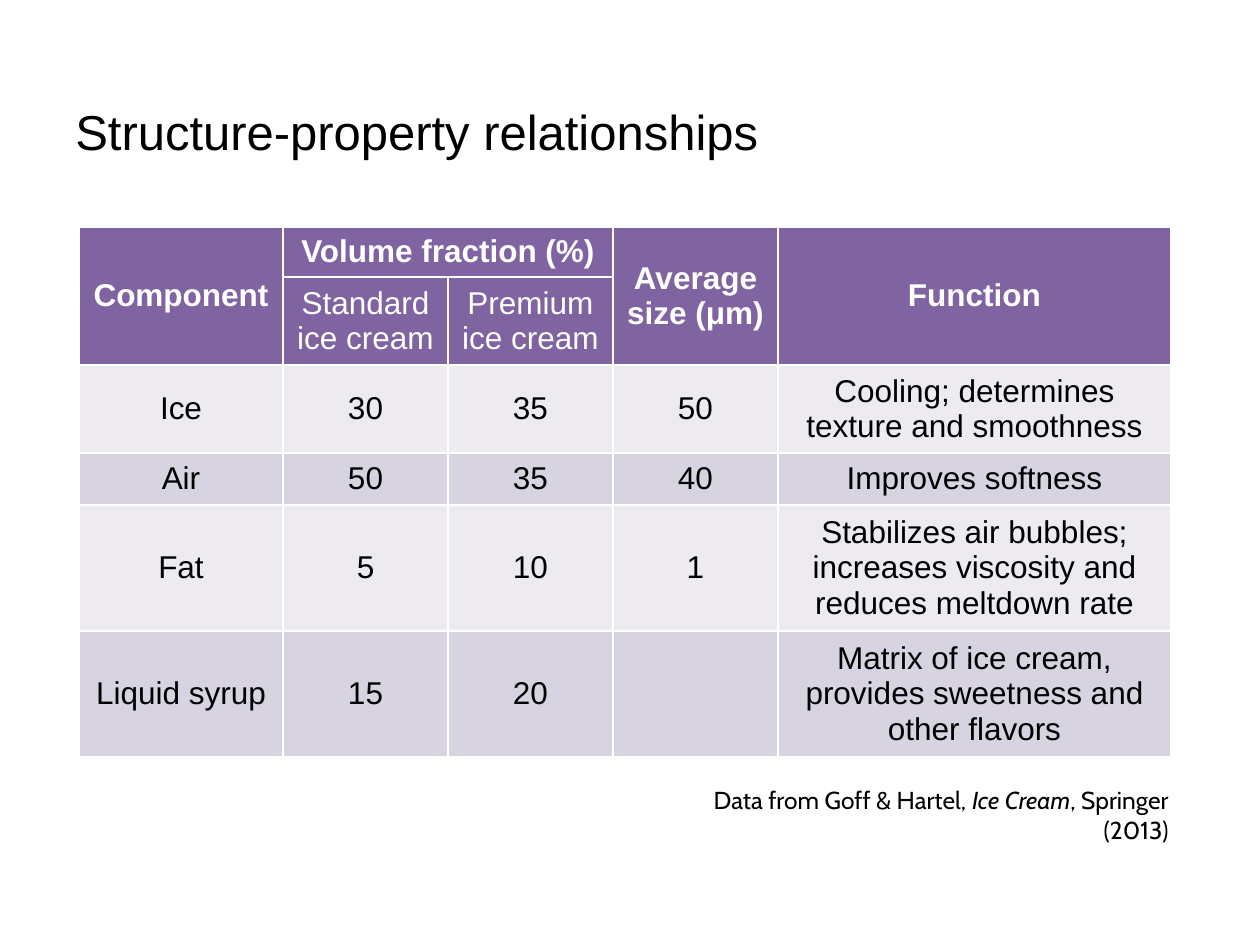
import dataclasses
import typing

import pptx
import pptx.dml.color
import pptx.enum.text
import pptx.oxml
import pptx.oxml.ns
import pptx.util

PIXELS_PER_INCH = 126
PURPLE, PALE, LILAC = "8064A2", "EDEAF0", "D8D3E0"
WHITE, BLACK = "FFFFFF", "000000"
ALIGN = pptx.enum.text.PP_ALIGN
ANCHOR = pptx.enum.text.MSO_ANCHOR


@dataclasses.dataclass
class Run:
    """A stretch of text with its font settings."""
    text: str
    size: int = 18
    name: str = "Arial"
    color: str = BLACK
    bold: bool = False
    italic: bool = False


@dataclasses.dataclass
class TextBox:
    """A text box placed in pixels."""
    left: int
    top: int
    width: int
    height: int
    runs: list[Run]
    anchor: typing.Any = ANCHOR.TOP
    alignment: typing.Any = ALIGN.LEFT


@dataclasses.dataclass
class TableRow:
    """A table row with its height in pixels and its look."""
    height: int
    texts: list[str]
    fill: str
    color: str = BLACK
    bold: bool = False


TEXT_BOXES = [
    TextBox(63, 63, 1124, 136, [Run("Structure-property relationships", 28)], ANCHOR.MIDDLE),
    TextBox(638, 779, 543, 43, [
        Run("Data from Goff & Hartel, ", 14, "Cabin"),
        Run("Ice Cream", 14, "Cabin", italic=True),
        Run(", Springer (2013)", 14, "Cabin"),
    ], alignment=ALIGN.RIGHT),
]
TABLE_LEFT, TABLE_TOP = 79, 227
COLUMN_WIDTHS = [204, 165, 165, 165, 393]
MERGES = [((0, 0), (1, 0)), ((0, 1), (0, 2)), ((0, 3), (1, 3)), ((0, 4), (1, 4))]
ROWS = [
    TableRow(50, ["Component", "Volume fraction (%)", "", "Average size (μm)", "Function"],
             PURPLE, WHITE, True),
    TableRow(88, ["", "Standard ice cream", "Premium ice cream", "", ""], PURPLE, WHITE),
    TableRow(88, ["Ice", "30", "35", "50", "Cooling; determines texture and smoothness"], PALE),
    TableRow(52, ["Air", "50", "35", "40", "Improves softness"], LILAC),
    TableRow(126, ["Fat", "5", "10", "1",
                   "Stabilizes air bubbles; increases viscosity and reduces meltdown rate"], PALE),
    TableRow(126, ["Liquid syrup", "15", "20", "",
                   "Matrix of ice cream, provides sweetness and other flavors"], LILAC),
]


def px(length: int) -> pptx.util.Emu:
    """Turn pixels into EMU."""
    return pptx.util.Emu(round(length * 914400 / PIXELS_PER_INCH))


def rgb(color: str) -> pptx.dml.color.RGBColor:
    """Turn a hex string into a colour."""
    return pptx.dml.color.RGBColor.from_string(color)


def set_font(font: typing.Any, run: Run) -> None:
    """Give a font the settings of a run."""
    values = {"size": pptx.util.Pt(run.size), "name": run.name,
              "bold": run.bold, "italic": run.italic}
    for attribute, value in values.items():
        setattr(font, attribute, value)
    font.color.rgb = rgb(run.color)


def write(paragraph: typing.Any, runs: list[Run], alignment: typing.Any) -> None:
    """Write runs into a paragraph."""
    paragraph.alignment = alignment
    for run in runs:
        text_run = paragraph.add_run()
        text_run.text = run.text
        set_font(text_run.font, run)


def add_text_box(slide: typing.Any, box: TextBox) -> None:
    """Add a wrapping text box to the slide."""
    shape = slide.shapes.add_textbox(px(box.left), px(box.top), px(box.width), px(box.height))
    shape.text_frame.word_wrap = True
    shape.text_frame.vertical_anchor = box.anchor
    write(shape.text_frame.paragraphs[0], box.runs, box.alignment)


def add_borders(cell: typing.Any, color: str, points: float) -> None:
    """Draw a line on all four sides of a cell."""
    properties = cell._tc.get_or_add_tcPr()
    for side in ("lnL", "lnR", "lnT", "lnB"):
        properties.append(pptx.oxml.parse_xml(
            f'<a:{side} {pptx.oxml.ns.nsdecls("a")} w="{pptx.util.Pt(points)}">'
            f'<a:solidFill><a:srgbClr val="{color}"/></a:solidFill></a:{side}>'))


def format_cell(cell: typing.Any, text: str, row: TableRow) -> None:
    """Fill, outline and write one table cell."""
    add_borders(cell, WHITE, 1.5)
    cell.fill.solid()
    cell.fill.fore_color.rgb = rgb(row.fill)
    cell.vertical_anchor = ANCHOR.MIDDLE
    if text:
        run = Run(text, color=row.color, bold=row.bold)
        write(cell.text_frame.paragraphs[0], [run], ALIGN.CENTER)


def add_component_table(slide: typing.Any) -> None:
    """Add the table of ice cream components."""
    table = slide.shapes.add_table(
        len(ROWS), len(COLUMN_WIDTHS), px(TABLE_LEFT), px(TABLE_TOP),
        px(sum(COLUMN_WIDTHS)), px(sum(row.height for row in ROWS))).table
    table.horz_banding = False
    for column, width in zip(table.columns, COLUMN_WIDTHS):
        column.width = px(width)
    for row_index, row in enumerate(ROWS):
        table.rows[row_index].height = px(row.height)
        for column_index, text in enumerate(row.texts):
            format_cell(table.cell(row_index, column_index), text, row)
    for first, last in MERGES:
        table.cell(*first).merge(table.cell(*last))


def main() -> None:
    """Build the slide and save it."""
    presentation = pptx.Presentation()
    presentation.slide_width = px(1260)
    presentation.slide_height = px(945)
    slide = presentation.slides.add_slide(presentation.slide_layouts[6])
    add_component_table(slide)
    for box in TEXT_BOXES:
        add_text_box(slide, box)
    presentation.save("out.pptx")


if __name__ == "__main__":
    main()
